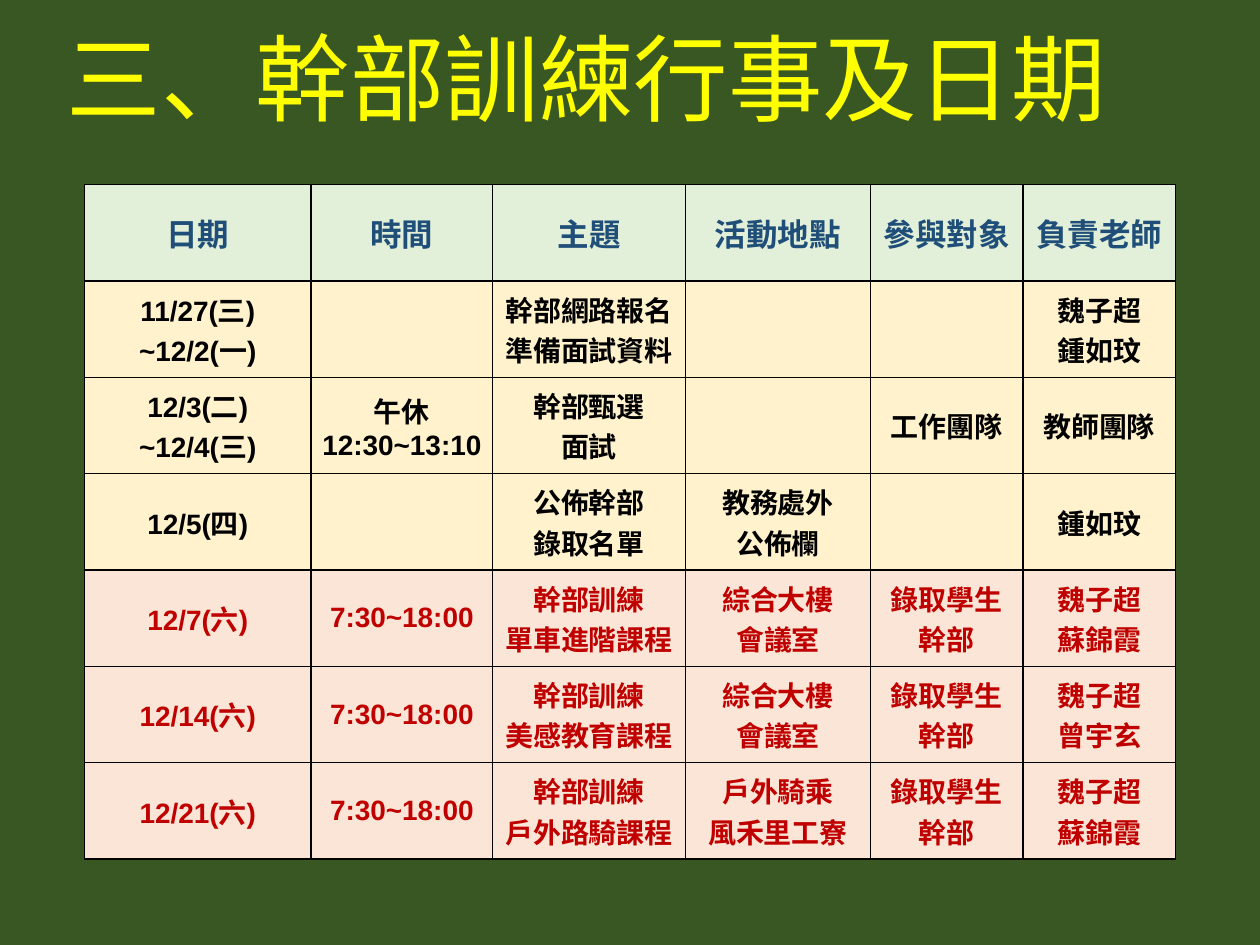
from lxml.etree import SubElement
from pptx import Presentation
from pptx.dml.color import RGBColor
from pptx.enum.text import MSO_ANCHOR as Anchor, PP_ALIGN as Align
from pptx.oxml.ns import qn
from pptx.util import Pt

CJK_FONT = "Noto Sans CJK SC"
HEADER, PLANNING, TRAINING = (
    # fill, text colour, text size
    ("E2F0D9", "1F4E79", 18),
    ("FFF2CC", "000000", 16),
    ("FBE5D6", "C00000", 16),
)
COLUMN_WIDTHS = [129.6, 103.7, 110.2, 105.8, 87.1, 87.1]
ROW_HEIGHT = 55.05

# "\v" breaks a line, "\n" starts a paragraph
SCHEDULE = [
    (HEADER, ["日期", "時間", "主題", "活動地點", "參與對象", "負責老師"]),
    (PLANNING, ["11/27(三)\v~12/2(一)", "", "幹部網路報名\v準備面試資料",
                "", "", "魏子超\n鍾如玟"]),
    (PLANNING, ["12/3(二)\v~12/4(三)", "午休\n12:30~13:10", "幹部甄選\v面試",
                "", "工作團隊", "教師團隊"]),
    (PLANNING, ["12/5(四)", "", "公佈幹部\v錄取名單",
                "教務處外\v公佈欄", "", "鍾如玟"]),
    (TRAINING, ["12/7(六)", "7:30~18:00", "幹部訓練\n單車進階課程",
                "綜合大樓\n會議室", "錄取學生幹部", "魏子超\n蘇錦霞"]),
    (TRAINING, ["12/14(六)", "7:30~18:00", "幹部訓練\n美感教育課程",
                "綜合大樓\n會議室", "錄取學生幹部", "魏子超\n曾宇玄"]),
    (TRAINING, ["12/21(六)", "7:30~18:00", "幹部訓練\n戶外路騎課程",
                "戶外騎乘\n風禾里工寮", "錄取學生幹部", "魏子超\n蘇錦霞"]),
]


def color(value):
    return RGBColor.from_string(value)


class SlideBuilder:
    title_color = "FFFF00"
    border_color = "000000"
    border_width = 1

    def __init__(self, slide, background):
        self.slide = slide
        fill = slide.background.fill
        fill.solid()
        fill.fore_color.rgb = color(background)

    def style(self, paragraph, font_name, size, text_color, bold=False):
        font = paragraph.font
        font.name, font.size, font.bold = font_name, Pt(size), bold
        font.color.rgb = color(text_color)
        properties = paragraph._p.pPr.find(qn("a:defRPr"))
        SubElement(properties, qn("a:ea"), typeface=CJK_FONT)

    def title(self, text, left, top, width, height):
        box = self.slide.shapes.add_textbox(Pt(left), Pt(top), Pt(width), Pt(height))
        frame = box.text_frame
        frame.word_wrap = True
        frame.vertical_anchor = Anchor.MIDDLE
        frame.text = text
        paragraph = frame.paragraphs[0]
        paragraph.line_spacing = 0.9
        self.style(paragraph, CJK_FONT, 54, self.title_color)

    def borders(self, cell):
        properties = cell._tc.get_or_add_tcPr()
        for index, side in enumerate(("lnL", "lnR", "lnT", "lnB")):
            line = properties.makeelement(
                qn(f"a:{side}"), {"w": str(Pt(self.border_width))})
            fill = SubElement(line, qn("a:solidFill"))
            SubElement(fill, qn("a:srgbClr"), val=self.border_color)
            properties.insert(index, line)

    def cell(self, cell, text, fill, text_color, size):
        cell.fill.solid()
        cell.fill.fore_color.rgb = color(fill)
        cell.margin_left = cell.margin_right = Pt(5)
        cell.margin_top = cell.margin_bottom = Pt(0)
        cell.vertical_anchor = Anchor.MIDDLE
        self.borders(cell)
        cell.text_frame.text = text
        for paragraph in cell.text_frame.paragraphs:
            paragraph.alignment = Align.CENTER
            self.style(paragraph, "Arial", size, text_color, bold=True)

    def table(self, rows, left, top, widths, row_height):
        table = self.slide.shapes.add_table(
            len(rows), len(widths), Pt(left), Pt(top),
            Pt(sum(widths)), Pt(row_height * len(rows))).table
        for column, width in zip(table.columns, widths):
            column.width = Pt(width)
        for row, (look, texts) in zip(table.rows, rows):
            row.height = Pt(row_height)
            for cell, text in zip(row.cells, texts):
                self.cell(cell, text, *look)


def main():
    presentation = Presentation()
    presentation.slide_width, presentation.slide_height = Pt(720), Pt(540)
    slide = presentation.slides.add_slide(presentation.slide_layouts[6])
    builder = SlideBuilder(slide, "385723")

    # Title
    builder.title("三、幹部訓練行事及日期", 31, 3, 624, 90)

    # Training schedule
    builder.table(SCHEDULE, 48.2, 105.5, COLUMN_WIDTHS, ROW_HEIGHT)

    presentation.save("out.pptx")


if __name__ == "__main__":
    main()
